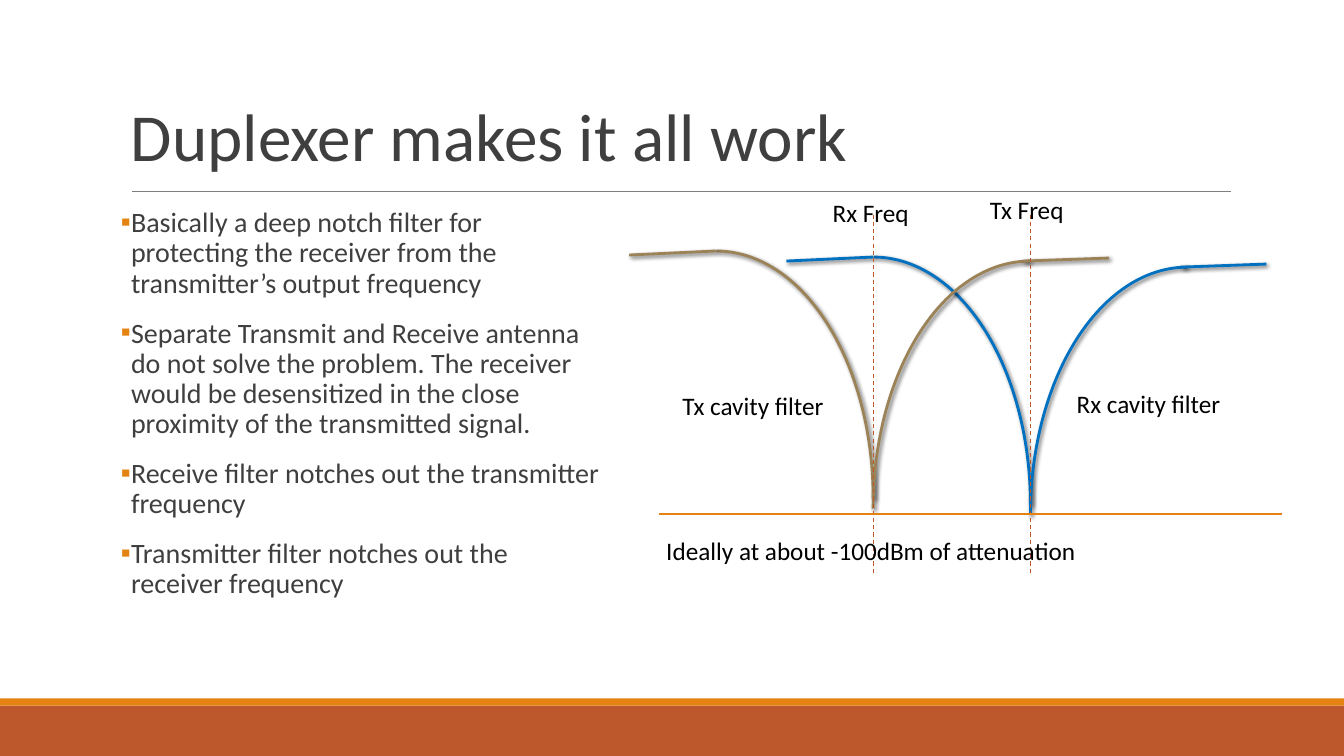
from pptx import Presentation
from pptx.dml.color import RGBColor
from pptx.enum.dml import MSO_LINE
from pptx.enum.shapes import MSO_CONNECTOR, MSO_SHAPE
from pptx.enum.text import MSO_ANCHOR
from pptx.oxml.ns import qn
from pptx.util import Inches, Pt
from lxml.etree import SubElement

RUST = RGBColor(0xBD, 0x58, 0x2C)
ORANGE = RGBColor(0xE4, 0x83, 0x12)
GRAY = RGBColor(0x7F, 0x7F, 0x7F)
CHARCOAL = RGBColor(0x3F, 0x3F, 0x3F)
BLACK = RGBColor(0, 0, 0)
BLUE = RGBColor(0x00, 0x70, 0xC0)
TAN = RGBColor(0x9B, 0x83, 0x57)

TITLE = "Duplexer makes it all work"
POINTS = [
    "Basically a deep notch filter for protecting the receiver from the transmitter’s output frequency",
    "Separate Transmit and Receive antenna do not solve the problem. The receiver would be "
    "desensitized in the close proximity of the transmitted signal.",
    "Receive filter notches out the transmitter frequency",
    "Transmitter filter notches out the receiver frequency",
]
LABELS = [
    ("Rx Freq", 8.16, 1.91, 1.15),
    ("Tx Freq", 9.72, 1.88, 1.15),
    ("Rx cavity filter", 10.58, 3.8, 1.93),
    ("Tx cavity filter", 6.67, 3.82, 1.93),
    ("Ideally at about -100dBm of attenuation", 6.51, 5.26, 4.8),
]
BANDS = [(7, 0.5, RUST), (6.93, 0.07, ORANGE)]
RX_FREQ, TX_FREQ = 8.66, 10.22
FILTERS = [(TX_FREQ, 2.55, BLUE), (RX_FREQ, 2.49, TAN)]
ARC_WIDTH, ARC_HEIGHT = 3.11, 4.91

deck = Presentation()
deck.slide_width, deck.slide_height = Inches(13.33), Inches(7.5)
page = deck.slides.add_slide(deck.slide_layouts[6])


def finish_line(shape, color, width, shadow=False, dash=None):
    shape.line.color.rgb = color
    shape.line.width = Pt(width)
    if dash:
        shape.line.dash_style = dash
    effects = SubElement(shape._element.spPr, qn("a:effectLst"))
    if shadow:
        outer = SubElement(effects, qn("a:outerShdw"), blurRad=str(Pt(3)), dist=str(Pt(2)),
                           dir="2700000", algn="tl", rotWithShape="0")
        tint = SubElement(outer, qn("a:srgbClr"), val="000000")
        SubElement(tint, qn("a:alpha"), val="60000")


def add_line(start, end, color, width, **style):
    ends = [Inches(value) for value in (*start, *end)]
    line = page.shapes.add_connector(MSO_CONNECTOR.STRAIGHT, *ends)
    finish_line(line, color, width, **style)


def add_arc(left, top, color, flip=False):
    arc = page.shapes.add_shape(MSO_SHAPE.ARC, Inches(left), Inches(top),
                                Inches(ARC_WIDTH), Inches(ARC_HEIGHT))
    arc.fill.background()
    if flip:
        arc._element.spPr.find(qn("a:xfrm")).set("flipH", "1")
    finish_line(arc, color, 2, shadow=True)


def add_text(paragraphs, left, top, width, height, size=18, color=BLACK, inset=0.1,
             anchor=MSO_ANCHOR.TOP, spacing=None, gap=0, bullet=None):
    box = page.shapes.add_textbox(Inches(left), Inches(top), Inches(width), Inches(height))
    frame = box.text_frame
    frame.word_wrap = True
    frame.vertical_anchor = anchor
    frame.margin_left = frame.margin_right = Inches(inset)
    frame.margin_top = frame.margin_bottom = Inches(0.05)
    for index, text in enumerate(paragraphs):
        para = frame.paragraphs[0] if index == 0 else frame.add_paragraph()
        para.text = text
        if spacing:
            para.line_spacing = spacing
        if index and gap:
            para.space_before = Pt(gap)
        if bullet:
            props = para._p.get_or_add_pPr()
            props.set("marL", str(Inches(0.1)))
            props.set("indent", str(Inches(-0.14)))
            tint = SubElement(props, qn("a:buClr"))
            SubElement(tint, qn("a:srgbClr"), val=str(ORANGE))
            SubElement(props, qn("a:buFont"), typeface="Calibri")
            SubElement(props, qn("a:buChar"), char=bullet)
        para.font.name = "Calibri"
        para.font.size = Pt(size)
        para.font.color.rgb = color


for top, height, color in BANDS:
    band = page.shapes.add_shape(MSO_SHAPE.RECTANGLE, 0, Inches(top),
                                 deck.slide_width, Inches(height))
    band.fill.solid()
    band.fill.fore_color.rgb = color
    band.line.fill.background()
    band.shadow.inherit = False

add_line((1.31, 1.9), (12.21, 1.9), GRAY, 0.75)
add_text([TITLE], 1.2, 0.2, 11, 1.59, size=48, color=CHARCOAL,
         anchor=MSO_ANCHOR.BOTTOM, spacing=0.85)
add_text(POINTS, 1.2, 2.02, 4.8, 4.4, size=20, color=CHARCOAL, inset=0,
         spacing=0.9, gap=14, bullet="▪")

for notch, top, color in FILTERS:
    add_arc(notch - ARC_WIDTH, top, color)
    add_arc(notch, top + 0.1, color, flip=True)
    add_line((notch - 1.56, top), (notch - 2.42, top + 0.04), color, 2, shadow=True)
    add_line((notch + 2.34, top + 0.07), (notch + 1.49, top + 0.1), color, 2, shadow=True)

for frequency in (RX_FREQ, TX_FREQ):
    add_line((frequency, 2.13), (frequency, 5.71), RUST, 0.75, dash=MSO_LINE.DASH)

for text, left, top, width in LABELS:
    add_text([text], left, top, width, 0.4)
add_line((6.54, 5.1), (12.72, 5.1), ORANGE, 1)

deck.save("out.pptx")
